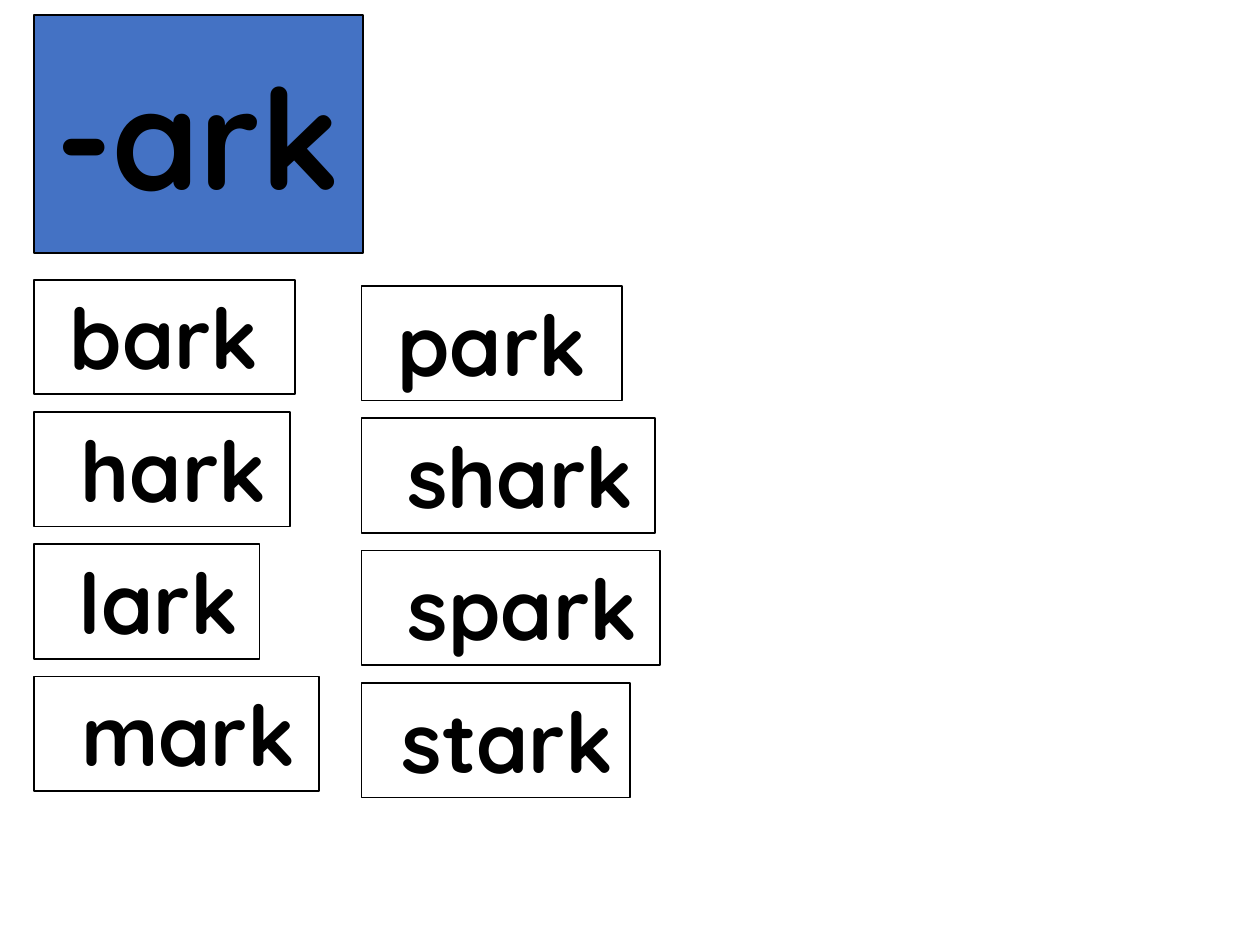
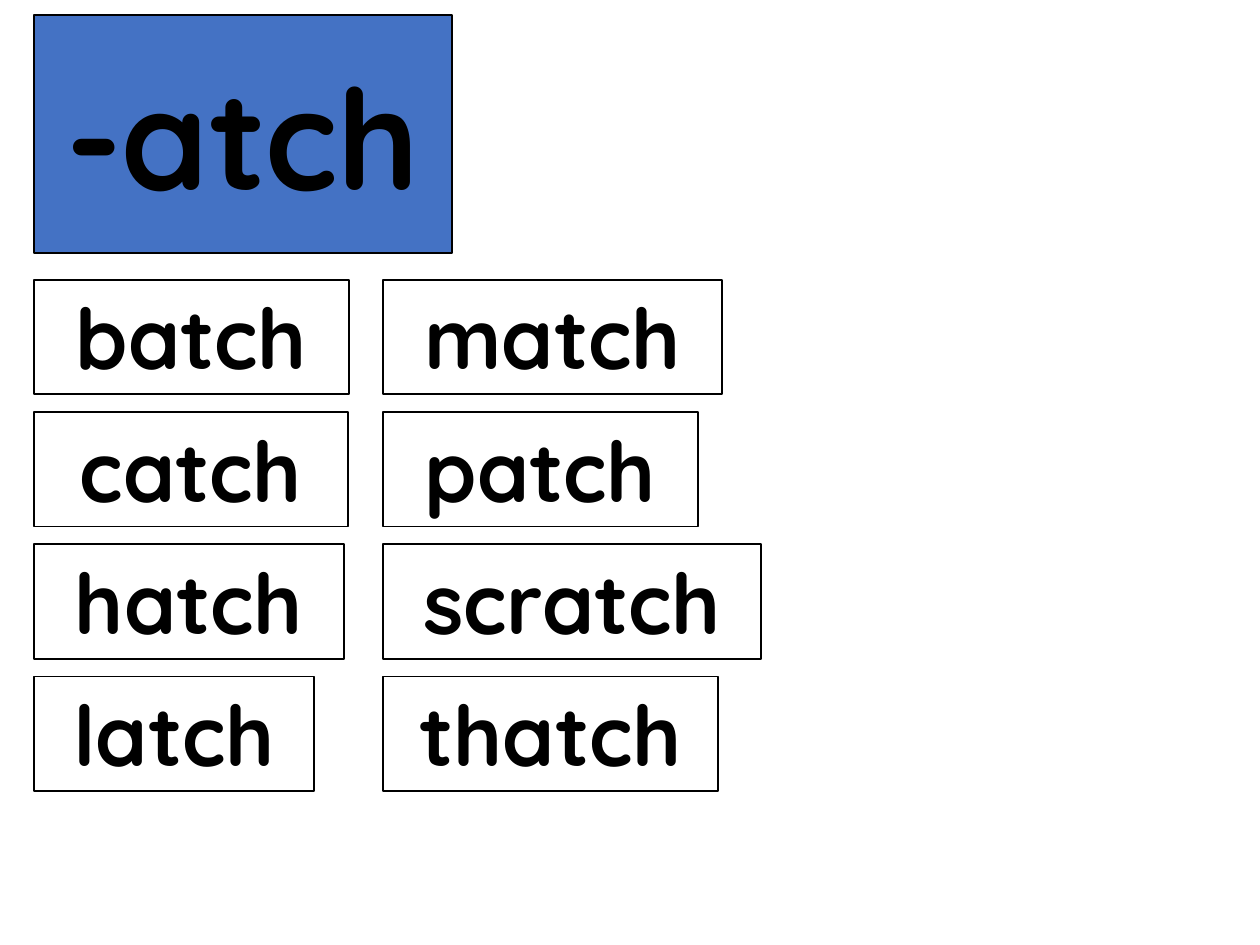
from dataclasses import dataclass

from pptx import Presentation
from pptx.dml.color import RGBColor
from pptx.enum.shapes import MSO_SHAPE
from pptx.enum.text import MSO_ANCHOR, MSO_AUTO_SIZE, PP_ALIGN
from pptx.util import Inches, Pt

RECT = MSO_SHAPE.RECTANGLE
TOP, MIDDLE = MSO_ANCHOR.TOP, MSO_ANCHOR.MIDDLE
GROW, FIXED = MSO_AUTO_SIZE.SHAPE_TO_FIT_TEXT, MSO_AUTO_SIZE.NONE
CENTER = PP_ALIGN.CENTER


@dataclass(frozen=True)
class Theme:
    font: str = "Quicksand"
    ink: RGBColor = RGBColor(0x00, 0x00, 0x00)
    card: RGBColor = RGBColor(0xFF, 0xFF, 0xFF)
    header: RGBColor = RGBColor(0x44, 0x72, 0xC4)
    word_size: int = 48
    header_size: int = 80
    border: int = 1


theme = Theme()
MARGIN = 0.27
HEADER_TOP, HEADER_HEIGHT = 0.12, 1.89
CARD_HEIGHT, ROW_STEP = 0.91, 1.05

WORD_FAMILIES = [
    ("-ark", 2.61, [
        (2.87, 2.27, [("park", 2.07), ("shark", 2.33), ("spark", 2.37), ("stark", 2.13)]),
        (MARGIN, 2.22, [("bark", 2.07), ("hark", 2.03), ("lark", 1.79), ("mark", 2.26)]),
    ]),
    ("-atch", 3.32, [
        (3.04, 2.22, [("match", 2.69), ("patch", 2.5), ("scratch", 3), ("thatch", 2.66)]),
        (MARGIN, 2.22, [("batch", 2.5), ("catch", 2.49), ("hatch", 2.46), ("latch", 2.22)]),
    ]),
]


def add_card(s, text, left, top, width, height, fill, size, anchor, is_word):
    sp = s.shapes.add_shape(RECT, Inches(left), Inches(top), Inches(width), Inches(height))
    sp.shadow.inherit = False
    sp.fill.solid()
    sp.fill.fore_color.rgb = fill
    sp.line.color.rgb = theme.ink
    sp.line.width = Pt(theme.border)
    tf = sp.text_frame
    tf.word_wrap = not is_word
    tf.auto_size = GROW if is_word else FIXED
    tf.vertical_anchor = anchor
    p = tf.paragraphs[0]
    p.alignment = CENTER
    r = p.add_run()
    r.text = text
    r.font.name = theme.font
    r.font.size = Pt(size)
    r.font.bold = True
    r.font.color.rgb = theme.ink


prs = Presentation()
prs.slide_width = Inches(10)
prs.slide_height = Inches(7.5)

for ending, header_width, columns in WORD_FAMILIES:
    s = prs.slides.add_slide(prs.slide_layouts[6])
    for left, first_top, words in columns:
        for row, (word, width) in enumerate(words):
            add_card(s, f" {word} ", left, first_top + row * ROW_STEP, width, CARD_HEIGHT,
                     theme.card, theme.word_size, TOP, True)
    add_card(s, ending, MARGIN, HEADER_TOP, header_width, HEADER_HEIGHT,
             theme.header, theme.header_size, MIDDLE, False)

prs.save("out.pptx")
